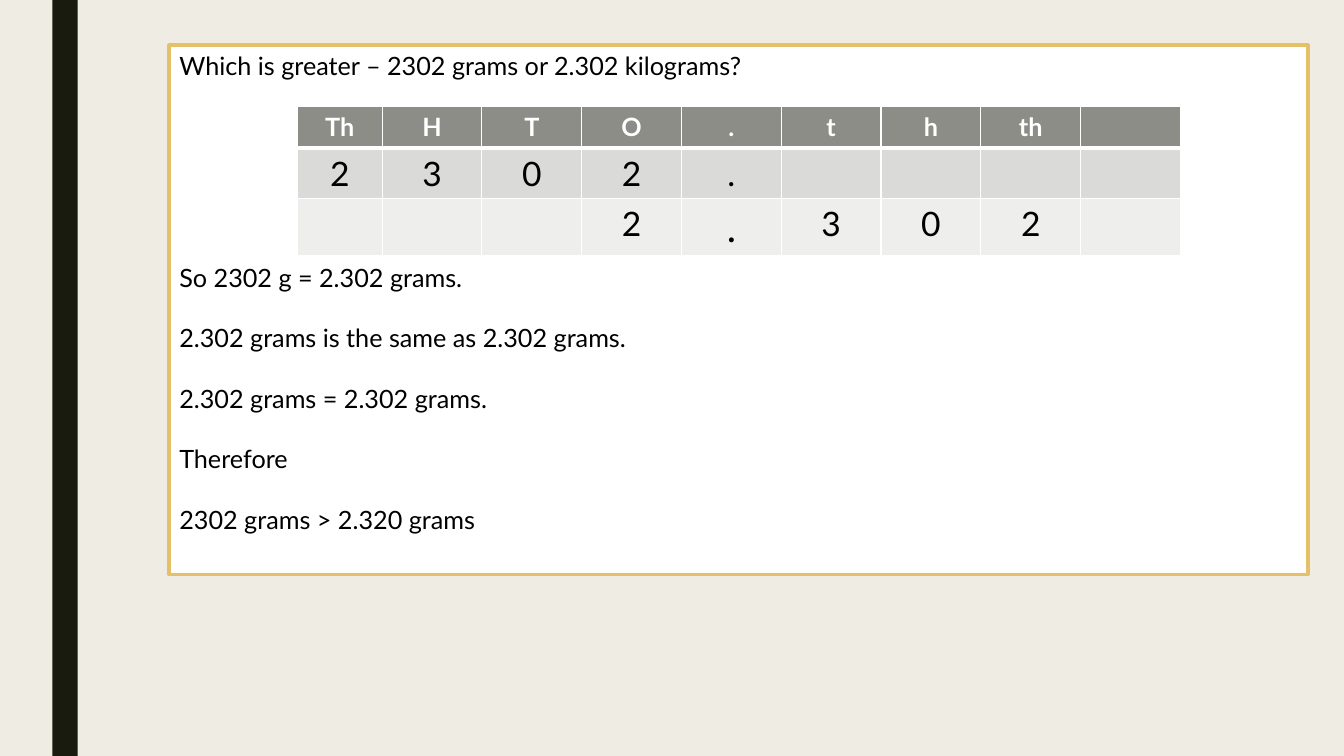
"""Build a slide comparing 2302 grams with 2.302 kilograms in a place value table."""
import pptx
import pptx.util
import pptx.dml.color
import pptx.enum.shapes
import pptx.enum.text
import pptx.oxml
import pptx.oxml.ns

Inches = pptx.util.Inches
Pt = pptx.util.Pt
FONT = "Lato"
COLOURS = {
    "background": "EFEDE3",
    "bar": "191B0E",
    "panel": "FFFFFF",
    "frame": "E6C069",
    "text": "000000",
    "header text": "FFFFFF",
    "grid": "FFFFFF",
}
ROW_FILLS = ["8C8D86", "DADBD9", "EEEEED"]
ROW_HEIGHTS = [0.41, 0.5, 0.56]
PLACE_VALUES = [
    ["Th", "H", "T", "O", ".", "t", "h", "th", ""],
    ["2", "3", "0", "2", ".", "", "", "", ""],
    ["", "", "", "2", ".", "3", "0", "2", ""],
]
LINE_HEIGHT = 21.6
WORKING = [
    ("Which is greater – 2302 grams or 2.302 kilograms?", 0),
    ("So 2302 g = 2.302 grams.", 6),
    ("2.302 grams is the same as 2.302 grams.", 1),
    ("2.302 grams = 2.302 grams.", 1),
    ("Therefore", 1),
    ("2302 grams > 2.320 grams", 1),
]


def rgb(hex_colour):
    return pptx.dml.color.RGBColor.from_string(hex_colour)


def style_text(paragraph, size, colour, bold=False):
    for run in paragraph.runs:
        run.font.name = FONT
        run.font.size = Pt(size)
        run.font.bold = bold
        run.font.color.rgb = rgb(colour)


deck = pptx.Presentation()
deck.slide_width = Inches(13.33)
deck.slide_height = Inches(7.5)
slide = deck.slides.add_slide(deck.slide_layouts[6])
slide.background.fill.solid()
slide.background.fill.fore_color.rgb = rgb(COLOURS["background"])

rectangle = pptx.enum.shapes.MSO_SHAPE.RECTANGLE
side_bar = slide.shapes.add_shape(rectangle, Inches(0.52), 0, Inches(0.25), Inches(7.5))
side_bar.shadow.inherit = False
side_bar.fill.solid()
side_bar.fill.fore_color.rgb = rgb(COLOURS["bar"])
side_bar.line.fill.background()

panel = slide.shapes.add_shape(
    rectangle, Inches(1.68), Inches(0.45), Inches(11.29), Inches(5.25)
)
panel.shadow.inherit = False
panel.fill.solid()
panel.fill.fore_color.rgb = rgb(COLOURS["panel"])
panel.line.color.rgb = rgb(COLOURS["frame"])
panel.line.width = Pt(2.75)

working = panel.text_frame
working.word_wrap = True
working.vertical_anchor = pptx.enum.text.MSO_ANCHOR.TOP
working.text = "\n".join(sentence for sentence, gap in WORKING)
for paragraph, (sentence, gap) in zip(working.paragraphs, WORKING):
    paragraph.alignment = pptx.enum.text.PP_ALIGN.LEFT
    paragraph.space_before = Pt(gap * LINE_HEIGHT)
    style_text(paragraph, 18, COLOURS["text"])

place_table = slide.shapes.add_table(
    len(PLACE_VALUES), len(PLACE_VALUES[0]),
    Inches(2.95), Inches(1.06), Inches(8.74), Inches(sum(ROW_HEIGHTS)),
).table
for index, column in enumerate(place_table.columns):
    column.width = Inches(0.84 if index == 0 else 0.99)

for row, digits in enumerate(PLACE_VALUES):
    place_table.rows[row].height = Inches(ROW_HEIGHTS[row])
    is_header = row == 0
    for column, digit in enumerate(digits):
        cell = place_table.cell(row, column)
        cell_properties = cell._tc.get_or_add_tcPr()
        for side in "LRTB":
            thick = (row, side) in [(0, "B"), (1, "T")]
            cell_properties.append(pptx.oxml.parse_xml(
                f'<a:ln{side} {pptx.oxml.ns.nsdecls("a")} w="{Pt(3 if thick else 1)}">'
                f'<a:solidFill><a:srgbClr val="{COLOURS["grid"]}"/></a:solidFill>'
                f'</a:ln{side}>'
            ))
        cell.fill.solid()
        cell.fill.fore_color.rgb = rgb(ROW_FILLS[row])
        cell.text_frame.text = digit
        paragraph = cell.text_frame.paragraphs[0]
        paragraph.alignment = pptx.enum.text.PP_ALIGN.CENTER
        size = 18 if is_header else 28 if (row, digit) == (2, ".") else 24
        style_text(paragraph, size, COLOURS["header text" if is_header else "text"], is_header)

deck.save("out.pptx")
